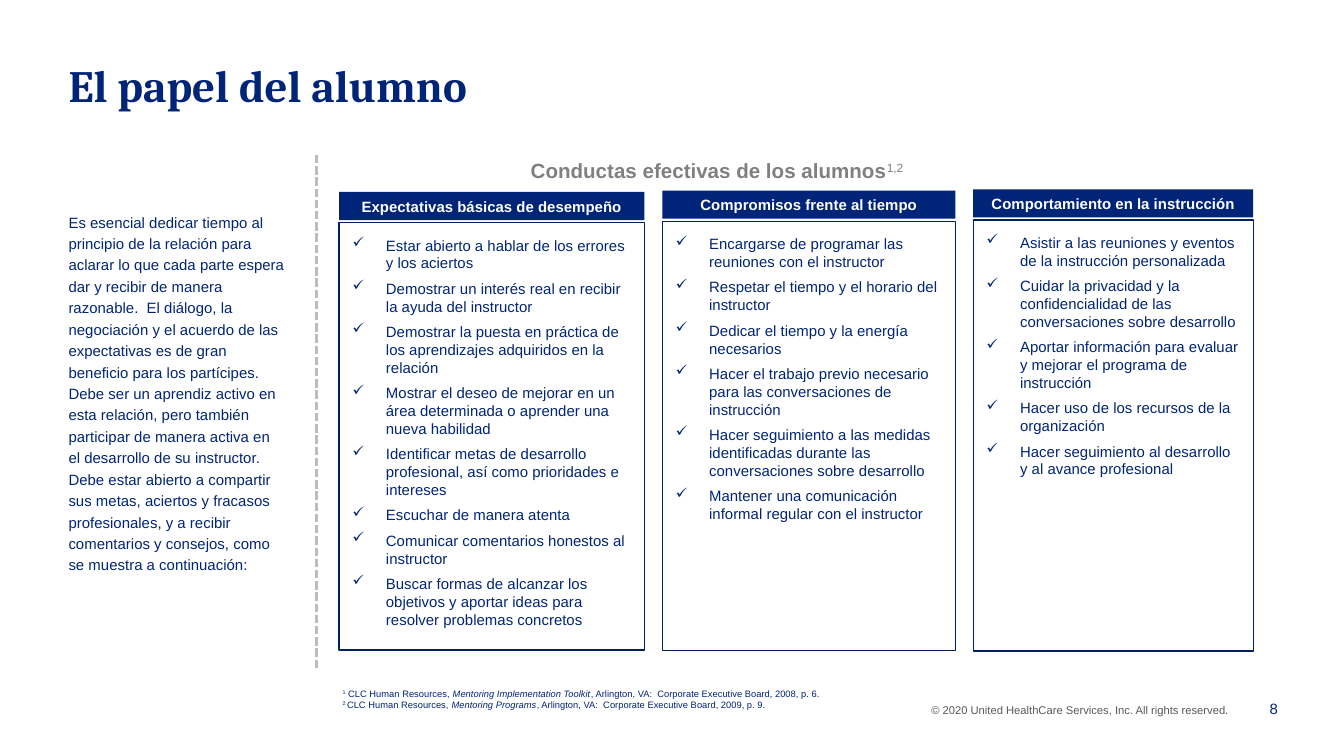
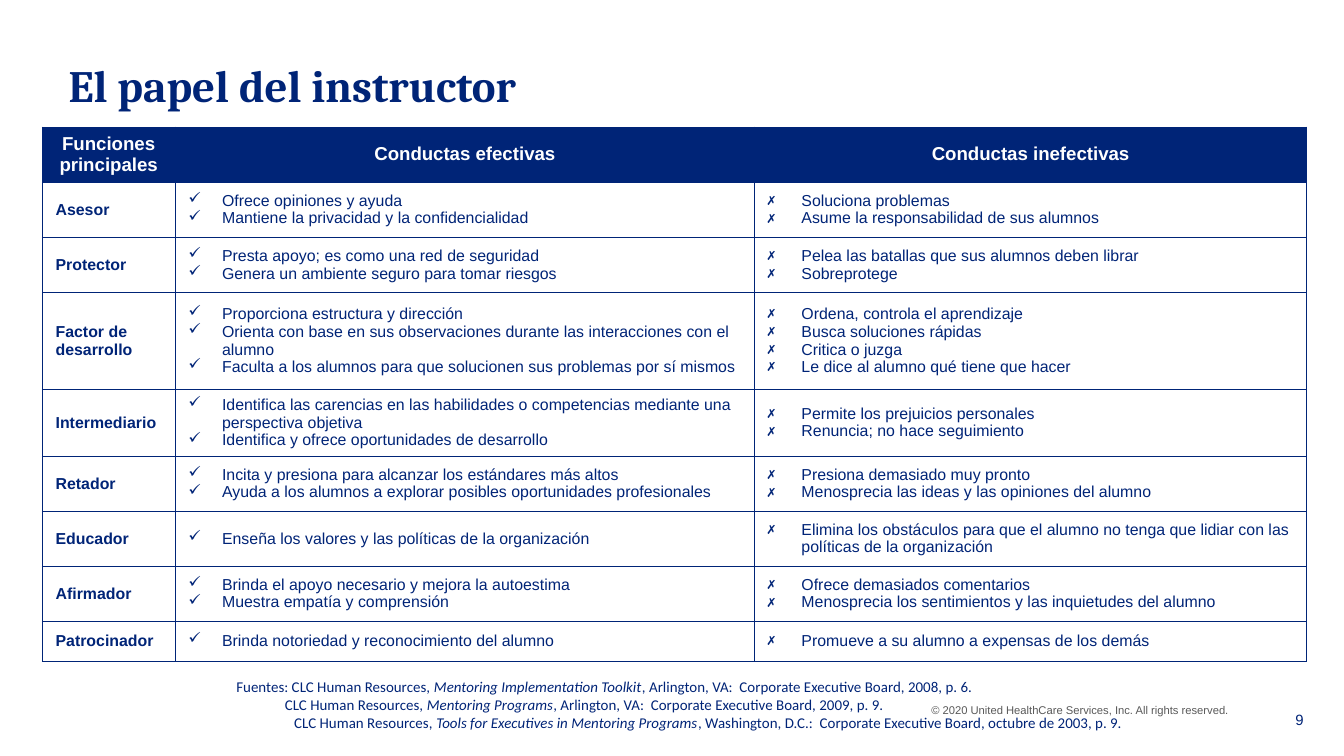
"""Build two slides on the roles of the learner and the instructor."""
from lxml import etree
from pptx import Presentation
from pptx.dml.color import RGBColor
from pptx.enum.dml import MSO_LINE
from pptx.enum.shapes import MSO_CONNECTOR, MSO_SHAPE
from pptx.enum.text import MSO_ANCHOR, MSO_AUTO_SIZE, PP_ALIGN
from pptx.oxml.ns import qn
from pptx.util import Pt

NAVY = RGBColor(0x00, 0x24, 0x77)
OUTLINE = RGBColor(0x00, 0x20, 0x60)
WHITE = RGBColor(0xFF, 0xFF, 0xFF)
HEADING_GRAY = RGBColor(0x80, 0x80, 0x80)
FOOTER_GRAY = RGBColor(0x59, 0x59, 0x59)
DIVIDER_GRAY = RGBColor(0xBD, 0xBD, 0xBD)

TOP, MIDDLE = MSO_ANCHOR.TOP, MSO_ANCHOR.MIDDLE
LEFT, CENTER, RIGHT = PP_ALIGN.LEFT, PP_ALIGN.CENTER, PP_ALIGN.RIGHT
NO_AUTOFIT = MSO_AUTO_SIZE.NONE
RECTANGLE = MSO_SHAPE.RECTANGLE
STRAIGHT = MSO_CONNECTOR.STRAIGHT
SHORT_DASH = MSO_LINE.SQUARE_DOT

CHECK, CROSS = "✓", "✗"
HANGING = 18
INSETS = (7.2, 3.6, 7.2, 3.6)
FLAT_INSETS = (7.2, 0, 7.2, 0)

COPYRIGHT = "© 2020 United HealthCare Services, Inc. All rights reserved."
TOOLKIT = [("CLC Human Resources, ", ""), ("Mentoring Implementation Toolkit", "italic"),
           (", Arlington, VA:  Corporate Executive Board, 2008, p. 6.", "")]
PROGRAMS = [("CLC Human Resources, ", ""), ("Mentoring Programs", "italic"),
            (", Arlington, VA:  Corporate Executive Board, 2009, p. 9.", "")]
EXECUTIVES = [("CLC Human Resources, ", ""),
              ("Tools for Executives in Mentoring Programs", "italic"),
              (", Washington, D.C.:  Corporate Executive Board, octubre de 2003, p. 9.", "")]

LEARNER_TITLE = "El papel del alumno"
LEARNER_INTRO = (
    "Es esencial dedicar tiempo al principio de la relación para aclarar lo que cada parte "
    "espera dar y recibir de manera razonable.  El diálogo, la negociación y el acuerdo de las "
    "expectativas es de gran beneficio para los partícipes.  Debe ser un aprendiz activo en "
    "esta relación, pero también participar de manera activa en el desarrollo de su "
    "instructor.  Debe estar abierto a compartir sus metas, aciertos y fracasos profesionales, "
    "y a recibir comentarios y consejos, como se muestra a continuación:")
LEARNER_HEADING = [("Conductas efectivas de los alumnos", "bold"), ("1,2", "superscript")]
LEARNER_NOTES = [[("1", "superscript"), (" ", "")] + TOOLKIT,
                 [("2 ", "superscript")] + PROGRAMS]
LEARNER_COLUMNS = [
    ("Expectativas básicas de desempeño", 163.5, [
        "Estar abierto a hablar de los errores y los aciertos",
        "Demostrar un interés real en recibir la ayuda del instructor",
        "Demostrar la puesta en práctica de los aprendizajes adquiridos en la relación",
        "Mostrar el deseo de mejorar en un área determinada o aprender una nueva habilidad",
        "Identificar metas de desarrollo profesional, así como prioridades e intereses",
        "Escuchar de manera atenta",
        "Comunicar comentarios honestos al instructor",
        "Buscar formas de alcanzar los objetivos y aportar ideas para resolver problemas "
        "concretos"]),
    ("Compromisos frente al tiempo", 157, [
        "Encargarse de programar las reuniones con el instructor",
        "Respetar el tiempo y el horario del instructor",
        "Dedicar el tiempo y la energía necesarios",
        "Hacer el trabajo previo necesario para las conversaciones de instrucción",
        "Hacer seguimiento a las medidas identificadas durante las conversaciones sobre "
        "desarrollo",
        "Mantener una comunicación informal regular con el instructor"]),
    ("Comportamiento en la instrucción", 150, [
        "Asistir a las reuniones y eventos de la instrucción personalizada",
        "Cuidar la privacidad y la confidencialidad de las conversaciones sobre desarrollo",
        "Aportar información para evaluar y mejorar el programa de instrucción",
        "Hacer uso de los recursos de la organización",
        "Hacer seguimiento al desarrollo y al avance profesional"]),
]

INSTRUCTOR_TITLE = "El papel del instructor"
INSTRUCTOR_NOTES = [(0, [("Fuentes: ", "")] + TOOLKIT), (26, PROGRAMS), (31, EXECUTIVES)]
TABLE_HEADERS = ["Funciones principales", "Conductas efectivas", "Conductas inefectivas"]
TABLE_WIDTHS = [71.2, 310.4, 295.8]
HEADER_HEIGHT = 29.5
ROLES = [
    ("Asesor", 29.5,
     ["Ofrece opiniones y ayuda", "Mantiene la privacidad y la confidencialidad"],
     ["Soluciona problemas", "Asume la responsabilidad de sus alumnos"]),
    ("Protector", 29.5,
     ["Presta apoyo; es como una red de seguridad",
      "Genera un ambiente seguro para tomar riesgos"],
     ["Pelea las batallas que sus alumnos deben librar", "Sobreprotege"]),
    ("Factor de desarrollo", 52,
     ["Proporciona estructura y dirección",
      "Orienta con base en sus observaciones durante las interacciones con el alumno",
      "Faculta a los alumnos para que solucionen sus problemas por sí mismos"],
     ["Ordena, controla el aprendizaje", "Busca soluciones rápidas", "Critica o juzga",
      "Le dice al alumno qué tiene que hacer"]),
    ("Intermediario", 35.8,
     ["Identifica las carencias en las habilidades o competencias mediante una perspectiva "
      "objetiva",
      "Identifica y ofrece oportunidades de desarrollo"],
     ["Permite los prejuicios personales", "Renuncia; no hace seguimiento"]),
    ("Retador", 29.5,
     ["Incita y presiona para alcanzar los estándares más altos",
      "Ayuda a los alumnos a explorar posibles oportunidades profesionales"],
     ["Presiona demasiado muy pronto", "Menosprecia las ideas y las opiniones del alumno"]),
    ("Educador", 29.5,
     ["Enseña los valores y las políticas de la organización"],
     ["Elimina los obstáculos para que el alumno no tenga que lidiar con las políticas de la "
      "organización"]),
    ("Afirmador", 29.5,
     ["Brinda el apoyo necesario y mejora la autoestima", "Muestra empatía y comprensión"],
     ["Ofrece demasiados comentarios",
      "Menosprecia los sentimientos y las inquietudes del alumno"]),
    ("Patrocinador", 21.5,
     ["Brinda notoriedad y reconocimiento del alumno"],
     ["Promueve a su alumno a expensas de los demás"]),
]


def indent(paragraph, margin, first_line=0, bullet=None):
    """Set the indents of a paragraph and its bullet, if any."""
    properties = paragraph._p.get_or_add_pPr()
    properties.set("marL", str(Pt(margin)))
    properties.set("indent", str(Pt(first_line)))
    if bullet:
        etree.SubElement(properties, qn("a:buChar")).set("char", bullet)
    else:
        etree.SubElement(properties, qn("a:buNone"))


def write(frame, paragraphs, size, color=NAVY, font="Arial", align=LEFT, bullet=None, gap=0,
          bold=False):
    """Fill a text frame with paragraphs, each a string or a list of styled runs."""
    for index, content in enumerate(paragraphs):
        paragraph = frame.paragraphs[0] if index == 0 else frame.add_paragraph()
        if bullet:
            indent(paragraph, HANGING, -HANGING, bullet)
        else:
            indent(paragraph, 0)
        paragraph.alignment = align
        paragraph.space_before = Pt(gap if index else 0)
        for text, style in [(content, "")] if isinstance(content, str) else content:
            run = paragraph.add_run()
            run.text = text
            run.font.size, run.font.name = Pt(size), font
            run.font.color.rgb = color
            run.font.bold = bold or style == "bold"
            run.font.italic = style == "italic"
            if style == "superscript":
                run._r.get_or_add_rPr().set("baseline", "30000")


def set_frame(frame, insets=INSETS, anchor=TOP):
    """Set wrapping, margins and anchor of a text frame."""
    frame.word_wrap, frame.auto_size = True, NO_AUTOFIT
    frame.vertical_anchor = anchor
    (frame.margin_left, frame.margin_top,
     frame.margin_right, frame.margin_bottom) = map(Pt, insets)


def place(shape, left, top, width, height):
    """Move and size a shape."""
    shape.left, shape.top, shape.width, shape.height = map(Pt, (left, top, width, height))


def add_text(slide, box, paragraphs, size, insets=INSETS, anchor=TOP, **style):
    """Add a text box and return its text frame."""
    frame = slide.shapes.add_textbox(*map(Pt, box)).text_frame
    set_frame(frame, insets, anchor)
    write(frame, paragraphs, size, **style)
    return frame


def add_panel(slide, box, fill=None, outline=None):
    """Add a plain rectangle and return its text frame."""
    panel = slide.shapes.add_shape(RECTANGLE, *map(Pt, box))
    panel.shadow.inherit = False
    if fill is None:
        panel.fill.background()
    else:
        panel.fill.solid()
        panel.fill.fore_color.rgb = fill
    if outline is None:
        panel.line.fill.background()
    else:
        panel.line.color.rgb = outline
        panel.line.width = Pt(0.75)
    return panel.text_frame


def start_slide(presentation, layout_index, title, number, number_position):
    """Add a slide with its title, copyright line and number."""
    slide = presentation.slides.add_slide(presentation.slide_layouts[layout_index])
    place(slide.shapes.title, 29.5, 27.4, 655.2, 43.2)
    set_frame(slide.shapes.title.text_frame)
    write(slide.shapes.title.text_frame, [title], 24, font="Cambria", bold=True)
    add_text(slide, (491.8, 373, 185.8, 14.4), [COPYRIGHT], 6, color=FOOTER_GRAY)
    add_text(slide, (*number_position, 28, 22.3), [number], 8, anchor=MIDDLE, align=RIGHT)
    return slide


def build_learner_slide(presentation):
    """Build the slide with three columns of learner behaviours."""
    slide = start_slide(presentation, 1, LEARNER_TITLE, "8", (663.8, 368.6))
    intro = slide.placeholders[1]
    place(intro, 29.5, 108.7, 130.3, 267.1)
    set_frame(intro.text_frame)
    write(intro.text_frame, [LEARNER_INTRO], 8)
    intro.text_frame.paragraphs[0].line_spacing = 1.2

    divider = slide.shapes.add_connector(STRAIGHT, Pt(169.5), Pt(83), Pt(169.5), Pt(359))
    divider.line.color.rgb = DIVIDER_GRAY
    divider.line.width = Pt(1.5)
    divider.line.dash_style = SHORT_DASH
    etree.SubElement(divider._element.spPr, qn("a:effectLst"))

    add_text(slide, (176.4, 368.6, 360.7, 12.2), LEARNER_NOTES, 5, FLAT_INSETS)
    add_text(slide, (262, 84.5, 288, 13.7), [LEARNER_HEADING], 11, (22.3, 0, 15.8, 0),
             color=HEADING_GRAY)

    left = 181.7
    for index, (heading, width, items) in enumerate(LEARNER_COLUMNS):
        top = 102.8 - 0.7 * index
        header = add_panel(slide, (left, top, width, 15.1), fill=NAVY)
        set_frame(header, FLAT_INSETS, MIDDLE)
        write(header, [heading], 8, color=WHITE, align=CENTER, bold=True)
        body = add_panel(slide, (left, top + 16.5, width, 229 + index), outline=OUTLINE)
        set_frame(body, (7.2,) * 4)
        write(body, items, 8, bullet=CHECK, gap=4)
        left += width + 9.6


def format_cell(cell, fill=None):
    """Give a cell navy borders, margins and a fill."""
    properties = cell._tc.get_or_add_tcPr()
    for side in ("a:lnL", "a:lnR", "a:lnT", "a:lnB"):
        border = etree.SubElement(properties, qn(side), w=str(Pt(0.25)))
        solid = etree.SubElement(border, qn("a:solidFill"))
        etree.SubElement(solid, qn("a:srgbClr"), val=str(NAVY))
    cell.vertical_anchor = MIDDLE
    (cell.margin_left, cell.margin_top,
     cell.margin_right, cell.margin_bottom) = map(Pt, INSETS)
    if fill is None:
        cell.fill.background()
    else:
        cell.fill.solid()
        cell.fill.fore_color.rgb = fill


def build_instructor_slide(presentation):
    """Build the slide with the table of instructor roles."""
    slide = start_slide(presentation, 5, INSTRUCTOR_TITLE, "9", (677.5, 374.4))
    heights = [HEADER_HEIGHT] + [role[1] for role in ROLES]
    table = slide.shapes.add_table(
        len(heights), len(TABLE_WIDTHS), Pt(22.6), Pt(68),
        Pt(sum(TABLE_WIDTHS)), Pt(sum(heights))).table
    table.horz_banding = False
    for column, width in zip(table.columns, TABLE_WIDTHS):
        column.width = Pt(width)
    for row, height in zip(table.rows, heights):
        row.height = Pt(height)

    for cell, heading in zip(table.rows[0].cells, TABLE_HEADERS):
        format_cell(cell, NAVY)
        write(cell.text_frame, [heading], 10, color=WHITE, align=CENTER, bold=True)
    for row_index, (role, _, effective, ineffective) in enumerate(ROLES, 1):
        contents = [([role], None), (effective, CHECK), (ineffective, CROSS)]
        for cell, (items, bullet) in zip(table.rows[row_index].cells, contents):
            format_cell(cell)
            write(cell.text_frame, items, 8.5, bullet=bullet, bold=bullet is None)

    notes = add_text(slide, (119.5, 362.9, 548.6, 28.8),
                     [runs for _, runs in INSTRUCTOR_NOTES], 8, FLAT_INSETS, font="Calibri")
    for paragraph, (margin, _) in zip(notes.paragraphs, INSTRUCTOR_NOTES):
        paragraph._p.get_or_add_pPr().set("marL", str(Pt(margin)))


def main():
    """Create and save the presentation."""
    presentation = Presentation()
    presentation.slide_width, presentation.slide_height = Pt(720), Pt(405)
    build_learner_slide(presentation)
    build_instructor_slide(presentation)
    presentation.save("out.pptx")


if __name__ == "__main__":
    main()
